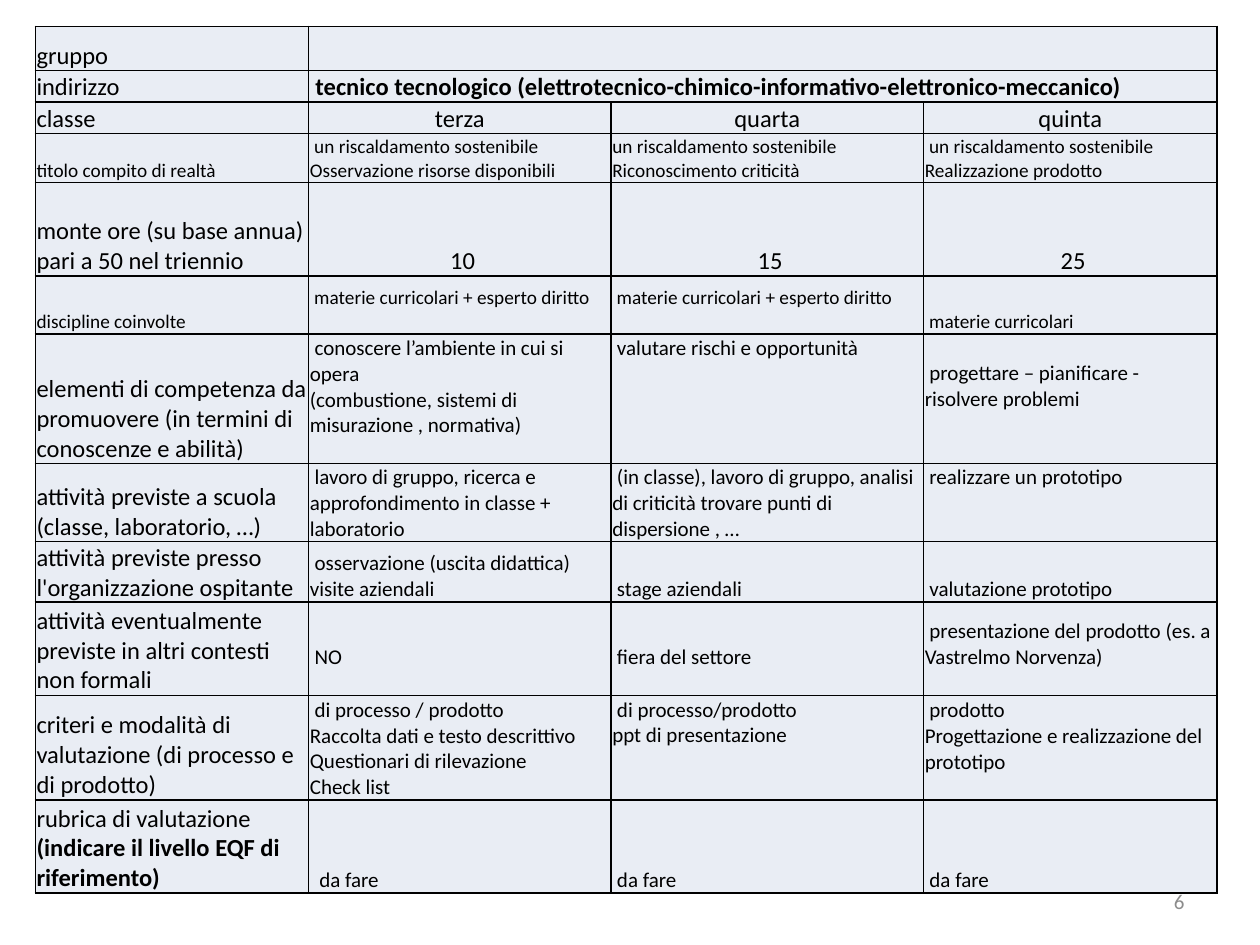
from dataclasses import dataclass

import lxml.etree
import pptx
import pptx.dml.color
import pptx.enum.text
import pptx.oxml.ns
import pptx.util

Inches = pptx.util.Inches
Pt = pptx.util.Pt
Align = pptx.enum.text.PP_ALIGN
Anchor = pptx.enum.text.MSO_ANCHOR

COLORS = {"text": "000000", "cell": "E9EDF4", "border": "000000", "number": "8C8C8C"}
FONT = "Calibri"
COLUMN_WIDTHS = (2.17, 2.4, 2.48, 2.33)
LINE_HEIGHT = 1.22


@dataclass(frozen=True)
class Entry:
    text: str
    bold_text: str = ""
    lines_below: int = 0


@dataclass(frozen=True)
class Row:
    height: float
    label: Entry
    entries: tuple[Entry, ...]
    label_size: int = 14
    entry_size: int = 12
    centered: bool = False


ROWS = (
    Row(0.35, Entry("gruppo"), (Entry(""),), entry_size=14),
    Row(0.25, Entry("indirizzo"), (
        Entry(" ", "tecnico tecnologico (elettrotecnico-chimico-informativo-elettronico-meccanico)"),
    ), entry_size=14),
    Row(0.25, Entry("classe"), (Entry("terza"), Entry("quarta"), Entry("quinta")),
        entry_size=14, centered=True),
    Row(0.39, Entry("titolo compito di realtà"), (
        Entry(" un riscaldamento sostenibile\nOsservazione risorse disponibili"),
        Entry("un riscaldamento sostenibile\nRiconoscimento criticità"),
        Entry(" un riscaldamento sostenibile\nRealizzazione prodotto"),
    ), label_size=11, entry_size=11),
    Row(0.74, Entry("monte ore (su base annua) pari a 50 nel triennio"),
        (Entry(" 10"), Entry(" 15"), Entry(" 25")), entry_size=14, centered=True),
    Row(0.46, Entry("discipline coinvolte"), (
        Entry(" materie curricolari + esperto diritto", lines_below=1),
        Entry(" materie curricolari + esperto diritto", lines_below=1),
        Entry(" materie curricolari"),
    ), label_size=11, entry_size=11),
    Row(1.03, Entry("elementi di competenza da promuovere (in termini di conoscenze e abilità)"), (
        Entry(" conoscere l’ambiente in cui si opera\n"
              "(combustione, sistemi di misurazione , normativa)", lines_below=1),
        Entry(" valutare rischi e opportunità", lines_below=4),
        Entry(" progettare – pianificare - risolvere problemi", lines_below=2),
    )),
    Row(0.62, Entry("attività previste a scuola (classe, laboratorio, …)"), (
        Entry(" lavoro di gruppo, ricerca e approfondimento in classe + laboratorio"),
        Entry(" (in classe), lavoro di gruppo, analisi di criticità trovare punti di dispersione , …"),
        Entry(" realizzare un prototipo", lines_below=2),
    )),
    Row(0.48, Entry("attività previste presso l'organizzazione ospitante"), (
        Entry(" osservazione (uscita didattica) visite aziendali"),
        Entry(" stage aziendali"),
        Entry(" valutazione prototipo"),
    )),
    Row(0.74, Entry("attività eventualmente previste in altri contesti non formali"), (
        Entry(" NO", lines_below=1),
        Entry(" fiera del settore", lines_below=1),
        Entry(" presentazione del prodotto (es. a Vastrelmo Norvenza)", lines_below=1),
    )),
    Row(0.83, Entry("criteri e modalità di valutazione (di processo e di prodotto)"), (
        Entry(" di processo / prodotto\nRaccolta dati e testo descrittivo\n"
              "Questionari di rilevazione\nCheck list"),
        Entry(" di processo/prodotto\nppt di presentazione", lines_below=2),
        Entry(" prodotto\nProgettazione e realizzazione del prototipo", lines_below=1),
    )),
    Row(0.74, Entry("rubrica di valutazione ", "(indicare il livello EQF di riferimento)"),
        (Entry("  da fare"), Entry(" da fare"), Entry(" da fare"))),
)


def rgb(name: str) -> pptx.dml.color.RGBColor:
    return pptx.dml.color.RGBColor.from_string(COLORS[name])


def format_font(font, size: int, color: str, bold: bool = False) -> None:
    font.name = FONT
    font.size = Pt(size)
    font.bold = bold
    font.color.rgb = rgb(color)


def style_cell(cell) -> None:
    properties = cell._tc.get_or_add_tcPr()
    qn = pptx.oxml.ns.qn
    for side in ("lnL", "lnR", "lnT", "lnB"):
        line = lxml.etree.SubElement(properties, qn(f"a:{side}"), w=str(Pt(1)))
        fill = lxml.etree.SubElement(line, qn("a:solidFill"))
        lxml.etree.SubElement(fill, qn("a:srgbClr"), val=COLORS["border"])
    cell.fill.solid()
    cell.fill.fore_color.rgb = rgb("cell")
    cell.vertical_anchor = Anchor.BOTTOM
    cell.margin_left = cell.margin_right = cell.margin_top = Inches(0.01)
    cell.margin_bottom = Inches(0)


def write_entry(cell, entry: Entry, size: int, centered: bool = False) -> None:
    cell.margin_bottom = Inches(round(entry.lines_below * size * LINE_HEIGHT / 72, 2))
    cell.text_frame.text = entry.text
    for paragraph in cell.text_frame.paragraphs:
        paragraph.alignment = Align.CENTER if centered else Align.LEFT
        format_font(paragraph.font, size, "text")
        for run in paragraph.runs:
            format_font(run.font, size, "text")
    if entry.bold_text:
        run = cell.text_frame.paragraphs[-1].add_run()
        run.text = entry.bold_text
        format_font(run.font, size, "text", bold=True)


def add_plan_table(slide) -> None:
    frame = slide.shapes.add_table(
        len(ROWS), len(COLUMN_WIDTHS), Inches(0.28), Inches(0.21),
        Inches(sum(COLUMN_WIDTHS)), Inches(sum(row.height for row in ROWS)))
    table = frame.table
    table.first_row = False
    table.horz_banding = False
    for column, width in zip(table.columns, COLUMN_WIDTHS):
        column.width = Inches(width)
    for index, row in enumerate(ROWS):
        table.rows[index].height = Inches(row.height)
        for cell in table.rows[index].cells:
            style_cell(cell)
        if len(row.entries) == 1:
            table.cell(index, 1).merge(table.cell(index, len(COLUMN_WIDTHS) - 1))
        write_entry(table.cell(index, 0), row.label, row.label_size)
        for column, entry in enumerate(row.entries, start=1):
            write_entry(table.cell(index, column), entry, row.entry_size, row.centered)


def add_slide_number(slide, number: str) -> None:
    shape = slide.shapes.add_textbox(Inches(7.17), Inches(6.95), Inches(2.33), Inches(0.4))
    shape.text_frame.word_wrap = True
    shape.text_frame.vertical_anchor = Anchor.MIDDLE
    shape.text_frame.text = number
    paragraph = shape.text_frame.paragraphs[0]
    paragraph.alignment = Align.RIGHT
    format_font(paragraph.runs[0].font, 12, "number")


def main() -> None:
    presentation = pptx.Presentation()
    presentation.slide_width = Inches(10)
    presentation.slide_height = Inches(7.5)
    slide = presentation.slides.add_slide(presentation.slide_layouts[6])
    add_slide_number(slide, "6")
    add_plan_table(slide)
    presentation.save("out.pptx")


if __name__ == "__main__":
    main()
